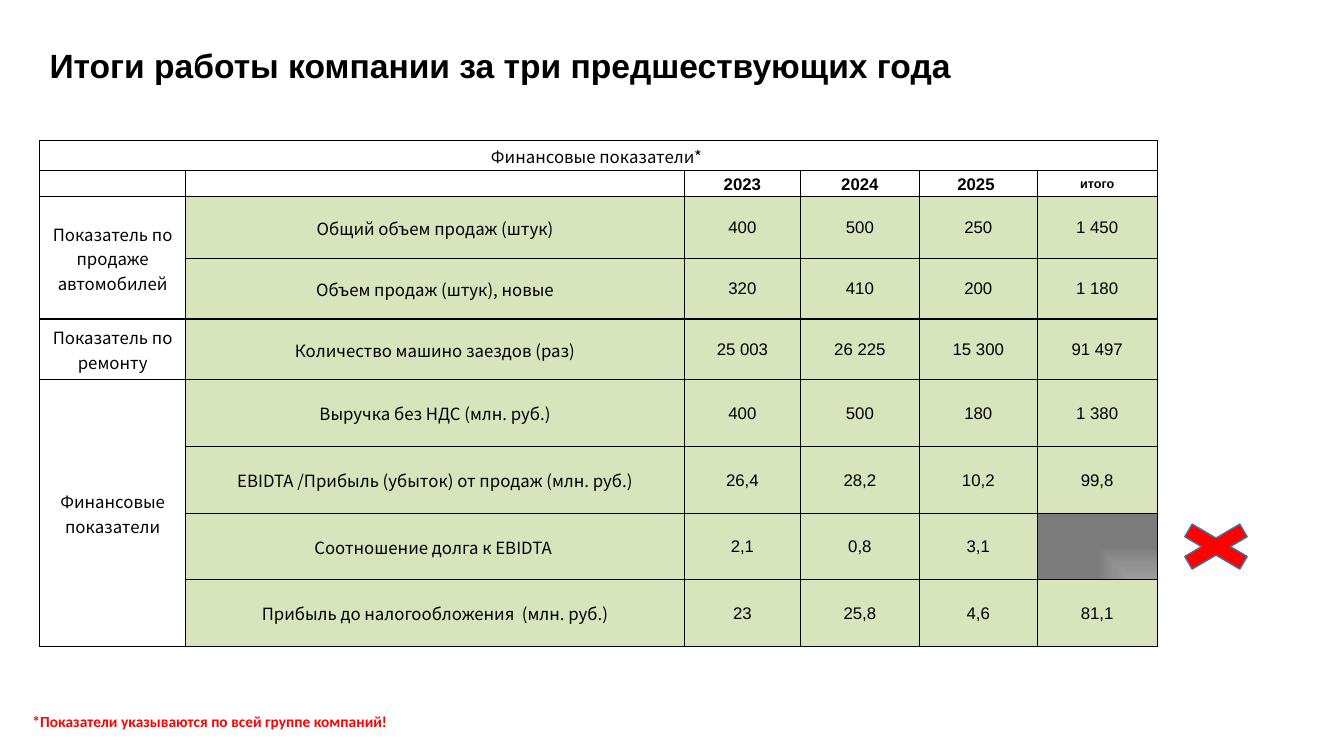
"""Builds a slide with a three-year table of company results."""
from lxml import etree
from pptx import Presentation, util as u
from pptx.dml.color import RGBColor
from pptx.enum import shapes, text
from pptx.oxml import parse_xml
from pptx.oxml.ns import nsdecls, qn

SANS, NUM = "Noto Sans CJK SC", "Arial"
GREEN = "D8E4BC"
COLS = [3.68, 12.57, 2.92, 3, 2.97, 3.02]
HEIGHTS = [0.76, 0.66, 1.55, 1.53, 1.53] + [1.68] * 4
ROWS = [
    ["Финансовые показатели* ", "", "", "", "", ""],
    ["", "", "2023", "2024", "2025 ", "итого"],
    ["Показатель по продаже автомобилей", "Общий объем продаж (штук)", "400", "500", "250", "1 450"],
    ["", "Объем продаж (штук), новые", "320", "410", "200", "1 180"],
    ["Показатель по ремонту", "Количество машино заездов (раз)", "25 003", "26 225", "15 300", "91 497"],
    ["Финансовые показатели", "Выручка без НДС (млн. руб.)", "400", "500", "180", "1 380"],
    ["", "EBIDTA /Прибыль (убыток) от продаж (млн. руб.)", "26,4", "28,2", "10,2", "99,8"],
    ["", "Соотношение долга к EBIDTA ", "2,1", "0,8", "3,1", ""],
    ["", "Прибыль до налогообложения  (млн. руб.)", "23", "25,8", "4,6", "81,1"],
]
MERGES = [((0, 0), (0, 5)), ((2, 0), (3, 0)), ((5, 0), (8, 0))]


def rgb(value):
    """Turn a hex string into a colour."""
    return RGBColor.from_string(value)


class Deck:
    """Hold the style and the current slide."""

    def __init__(self):
        """Start a one-slide presentation."""
        self.prs = Presentation()
        self.prs.slide_width, self.prs.slide_height = u.Cm(33.87), u.Cm(19.05)
        self.s = self.prs.slides.add_slide(self.prs.slide_layouts[6])

    def font(self, p, size, name, color="000000", bold=False):
        """Set the font of a paragraph."""
        f = p.font
        f.size, f.name, f.bold = u.Pt(size), name, bold
        f.color.rgb = rgb(color)

    def label(self, box, words, size, name, color):
        """Add a bold line of text."""
        tf = self.s.shapes.add_textbox(*map(u.Cm, box)).text_frame
        tf.word_wrap = True
        p = tf.paragraphs[0]
        p.text = words
        self.font(p, size, name, color, True)

    def borders(self, cell):
        """Draw thin black borders around a cell."""
        tc_pr = cell._tc.get_or_add_tcPr()
        for side in "LRTB":
            ln = etree.SubElement(tc_pr, qn(f"a:ln{side}"), w=str(u.Pt(1)))
            fill = etree.SubElement(ln, qn("a:solidFill"))
            etree.SubElement(fill, qn("a:srgbClr"), val="000000")

    def shade(self, cell):
        """Fill a cell with a grey gradient lit from the lower right."""
        stops = "".join(f'<a:gs pos="{pos}"><a:srgbClr val="{color}"/></a:gs>' for pos, color in
                        [(0, "9D9D9D"), (50000, "909090"), (100000, "7C7C7C")])
        cell._tc.get_or_add_tcPr().append(parse_xml(
            f'<a:gradFill {nsdecls("a")}><a:gsLst>{stops}</a:gsLst>'
            '<a:path path="rect"><a:fillToRect l="100000" t="100000"/></a:path></a:gradFill>'))

    def cell(self, cell, words, size, name, bold, fill):
        """Write and style one table cell."""
        cell.margin_left = cell.margin_right = cell.margin_top = u.Cm(0.02)
        cell.margin_bottom = 0
        cell.vertical_anchor = text.MSO_ANCHOR.MIDDLE
        p = cell.text_frame.paragraphs[0]
        if words:
            p.text = words
        p.alignment = text.PP_ALIGN.CENTER
        self.font(p, size, name, bold=bold)
        self.borders(cell)
        if fill == "shade":
            self.shade(cell)
        elif fill:
            cell.fill.solid()
            cell.fill.fore_color.rgb = rgb(fill)
        else:
            cell.fill.background()

    def table(self, left, top):
        """Add the table of results."""
        frame = self.s.shapes.add_table(len(ROWS), len(COLS), *map(
            u.Cm, (left, top, sum(COLS), sum(HEIGHTS))))
        tbl = frame.table
        tbl.first_row = tbl.horz_banding = False
        for col, width in zip(tbl.columns, COLS):
            col.width = u.Cm(width)
        for row, height in zip(tbl.rows, HEIGHTS):
            row.height = u.Cm(height)
        for i, row in enumerate(ROWS):
            for j, words in enumerate(row):
                fill = None
                if i > 1 and j > 0:
                    fill = GREEN if words else "shade"
                size = 9 if words == "итого" else 12
                self.cell(tbl.cell(i, j), words, size, NUM if j > 1 else SANS, i == 1, fill)
        for first, last in MERGES:
            tbl.cell(*first).merge(tbl.cell(*last))

    def cross(self, box, fill, line):
        """Add a cross mark."""
        sp = self.s.shapes.add_shape(shapes.MSO_SHAPE.MATH_MULTIPLY, *map(u.Cm, box))
        sp.shadow.inherit = False
        sp.fill.solid()
        sp.fill.fore_color.rgb = rgb(fill)
        sp.line.color.rgb = rgb(line)
        sp.line.width = u.Pt(1)


def main():
    """Build and save the slide."""
    deck = Deck()
    deck.label((1, 1, 29.2, 2), "Итоги работы компании за три предшествующих года", 24, NUM, "000000")
    deck.table(1, 3.54)
    deck.label((0.57, 17.83, 33.1, 0.73), "*Показатели указываются по всей группе компаний!",
               11, "Calibri", "FF0000")
    deck.cross((29.31, 12.99, 2.67, 1.57), "FF0000", "43739E")
    deck.prs.save("out.pptx")


if __name__ == "__main__":
    main()
